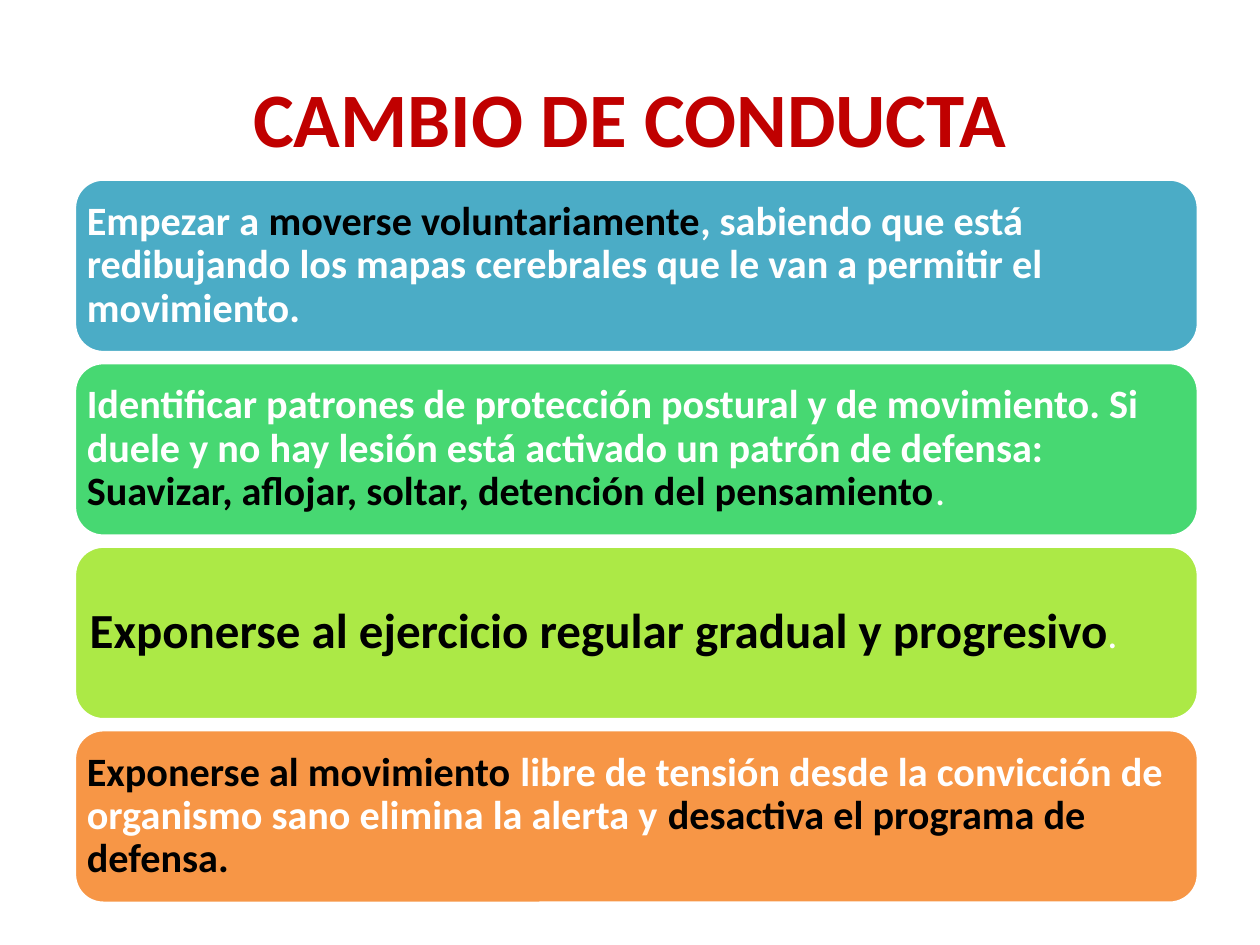
from pptx import Presentation
from pptx.dml.color import RGBColor
from pptx.enum import shapes, text
from pptx.util import Cm, Pt

FONT = "Calibri"
WHITE, BLACK, RED = "FFFFFF", "000000", "C00000"
TITLE = "CAMBIO DE CONDUCTA"

BANDS = [
    ("4BACC6", 0.08, [
        ("Empezar a ", 23, WHITE, True),
        ("moverse voluntariamente", 23, BLACK, True),
        (", sabiendo que está redibujando los mapas cerebrales que le van a "
         "permitir el movimiento.", 23, WHITE, True),
    ]),
    ("47D872", 0.08, [
        ("Identificar patrones de protección postural y de movimiento. Si duele "
         "y no hay lesión está activado un patrón de defensa: ", 23, WHITE, True),
        ("Suavizar, aflojar, soltar, detención del pensamiento", 23, BLACK, True),
        (".", 23, WHITE, False),
    ]),
    ("ACE946", 0.14, [
        ("Exponerse al ejercicio regular gradual y progresivo", 28, BLACK, True),
        (".", 23, WHITE, False),
    ]),
    ("F79646", 0.08, [
        ("Exponerse al movimiento ", 23, BLACK, True),
        ("libre de tensión desde la convicción de organismo sano elimina la "
         "alerta y ", 23, WHITE, True),
        ("desactiva el programa de defensa.", 23, BLACK, True),
    ]),
]

LEFT, TOP, WIDTH, HEIGHT, GAP = 1.5, 3.61, 22.66, 3.5, 0.2


def rgb(value):
    return RGBColor.from_string(value)


def add_run(p, words, size, color, bold):
    r = p.add_run()
    r.text = words
    r.font.name = FONT
    r.font.size = Pt(size)
    r.font.bold = bold
    r.font.color.rgb = rgb(color)


def add_title(s):
    tf = s.shapes.add_textbox(Cm(1.27), Cm(0.76), Cm(22.86), Cm(3.18)).text_frame
    tf.word_wrap = True
    tf.vertical_anchor = text.MSO_ANCHOR.MIDDLE
    p = tf.paragraphs[0]
    p.alignment = text.PP_ALIGN.CENTER
    add_run(p, TITLE, 44, RED, True)


def add_band(s, top, fill, margin, runs):
    sp = s.shapes.add_shape(shapes.MSO_SHAPE.ROUNDED_RECTANGLE,
                            Cm(LEFT), Cm(top), Cm(WIDTH), Cm(HEIGHT))
    sp.shadow.inherit = False
    sp.fill.solid()
    sp.fill.fore_color.rgb = rgb(fill)
    sp.line.color.rgb = rgb(WHITE)
    sp.line.width = Pt(2)
    tf = sp.text_frame
    tf.word_wrap = True
    tf.vertical_anchor = text.MSO_ANCHOR.MIDDLE
    tf.margin_left = tf.margin_right = Cm(margin)
    tf.margin_top = tf.margin_bottom = Cm(margin)
    p = tf.paragraphs[0]
    p.alignment = text.PP_ALIGN.LEFT
    p.line_spacing = 0.9
    for run in runs:
        add_run(p, *run)


def main():
    prs = Presentation()
    prs.slide_width, prs.slide_height = Cm(25.4), Cm(19.05)
    s = prs.slides.add_slide(prs.slide_layouts[6])
    add_title(s)
    for i, band in enumerate(BANDS):
        add_band(s, TOP + i * (HEIGHT + GAP), *band)
    prs.save("out.pptx")


if __name__ == "__main__":
    main()
